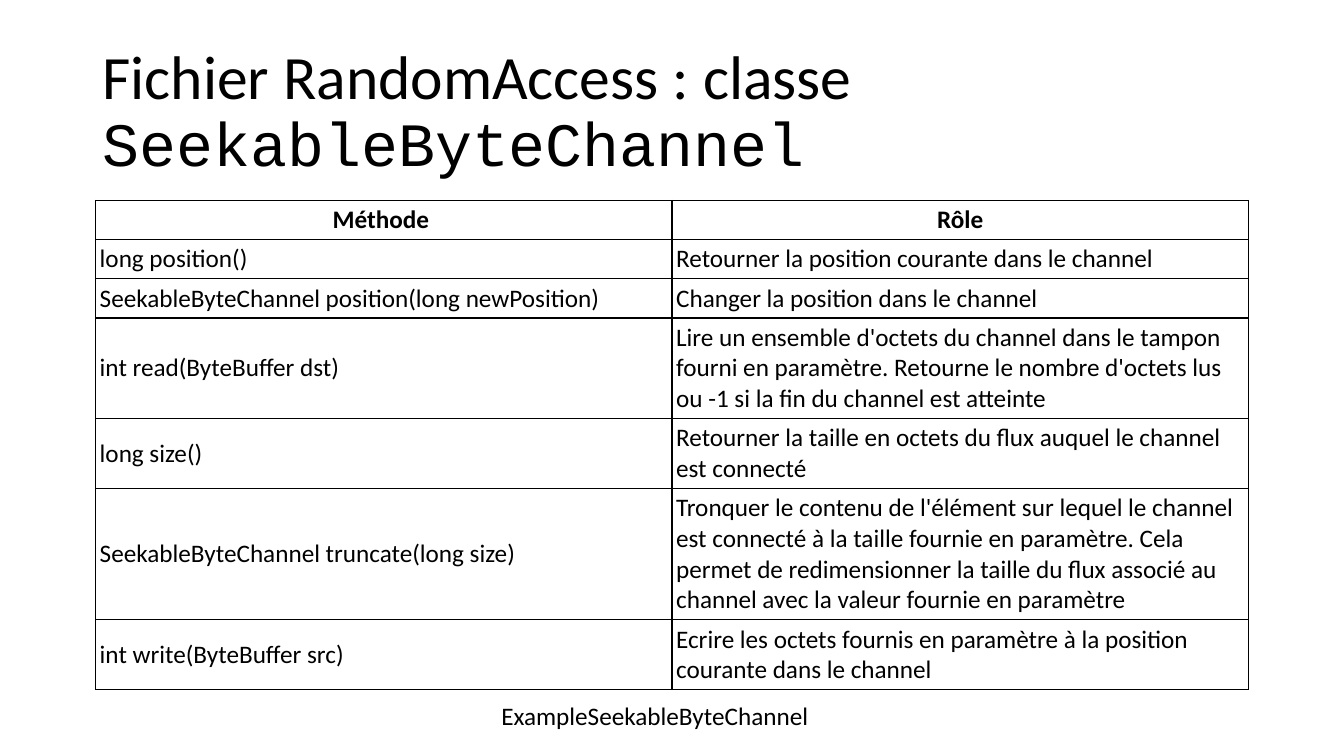
from lxml.etree import SubElement
from pptx import Presentation
from pptx.dml.color import RGBColor
from pptx.enum.text import MSO_ANCHOR, MSO_AUTO_SIZE, PP_ALIGN
from pptx.oxml.ns import qn
from pptx.util import Pt

PX = 9525
BLACK = "000000"
ROWS = [
    (37, "Méthode ", "Rôle"),
    (37, "long position()", "Retourner la position courante dans le channel"),
    (37, "SeekableByteChannel position(long newPosition)",
     "Changer la position dans le channel"),
    (94, "int read(ByteBuffer dst)",
     "Lire un ensemble d'octets du channel dans le tampon fourni en paramètre. "
     "Retourne le nombre d'octets lus ou -1 si la fin du channel est atteinte"),
    (65, "long size()",
     "Retourner la taille en octets du flux auquel le channel est connecté"),
    (123, "SeekableByteChannel truncate(long size)",
     "Tronquer le contenu de l'élément sur lequel le channel est connecté à la "
     "taille fournie en paramètre. Cela permet de redimensionner la taille du "
     "flux associé au channel avec la valeur fournie en paramètre"),
    (65, "int write(ByteBuffer src)",
     "Ecrire les octets fournis en paramètre à la position courante dans le channel"),
]


def px(*sizes):
    return [size * PX for size in sizes]


def paint(target, color):
    target.rgb = RGBColor.from_string(color)


def write(para, text, size=18, font="Calibri", bold=False, color=BLACK,
          align=PP_ALIGN.LEFT):
    para.alignment = align
    run = para.add_run()
    run.text = text
    run.font.size = Pt(size)
    run.font.name = font
    run.font.bold = bold
    paint(run.font.color, color)


def frame(cell, color=BLACK):
    """Draw a thin line on all four sides of a table cell."""
    props = cell._tc.get_or_add_tcPr()
    for index, side in enumerate(("lnL", "lnR", "lnT", "lnB")):
        line = props.makeelement(qn("a:" + side), {"w": str(Pt(1))})
        fill = SubElement(line, qn("a:solidFill"))
        SubElement(fill, qn("a:srgbClr"), val=color)
        props.insert(index, line)


def add_title(slide, box):
    title = slide.shapes.title
    title.left, title.top, title.width, title.height = px(*box)
    body = title.text_frame
    body.auto_size = MSO_AUTO_SIZE.NONE
    body.vertical_anchor = MSO_ANCHOR.MIDDLE
    para = body.paragraphs[0]
    para.line_spacing = 0.9
    write(para, "Fichier RandomAccess : classe ", size=44)
    write(para, "SeekableByteChannel", size=44, font="Courier New")


def add_grid(slide, box):
    table = slide.shapes.add_table(len(ROWS), 2, *px(*box)).table
    table.horz_banding = False
    for column in table.columns:
        column.width = box[2] * PX // 2
    for index, (height, *texts) in enumerate(ROWS):
        table.rows[index].height = height * PX
        head = index == 0
        for cell, text in zip(table.rows[index].cells, texts):
            cell.fill.background()
            frame(cell)
            cell.vertical_anchor = MSO_ANCHOR.MIDDLE
            cell.margin_left = cell.margin_right = 4 * PX
            cell.margin_top = cell.margin_bottom = 4 * PX
            write(cell.text_frame.paragraphs[0], text, bold=head,
                  align=PP_ALIGN.CENTER if head else PP_ALIGN.LEFT)


def add_label(slide, box):
    body = slide.shapes.add_textbox(*px(*box)).text_frame
    body.word_wrap = False
    body.auto_size = MSO_AUTO_SIZE.SHAPE_TO_FIT_TEXT
    write(body.paragraphs[0], "ExampleSeekableByteChannel")


def main():
    deck = Presentation()
    deck.slide_width, deck.slide_height = px(1280, 720)
    slide = deck.slides.add_slide(deck.slide_layouts[5])
    add_title(slide, (88, 38, 1104, 139))
    add_grid(slide, (91, 191, 1098, sum(row[0] for row in ROWS)))
    add_label(slide, (468, 662, 315, 38))
    deck.save("out.pptx")


if __name__ == "__main__":
    main()
